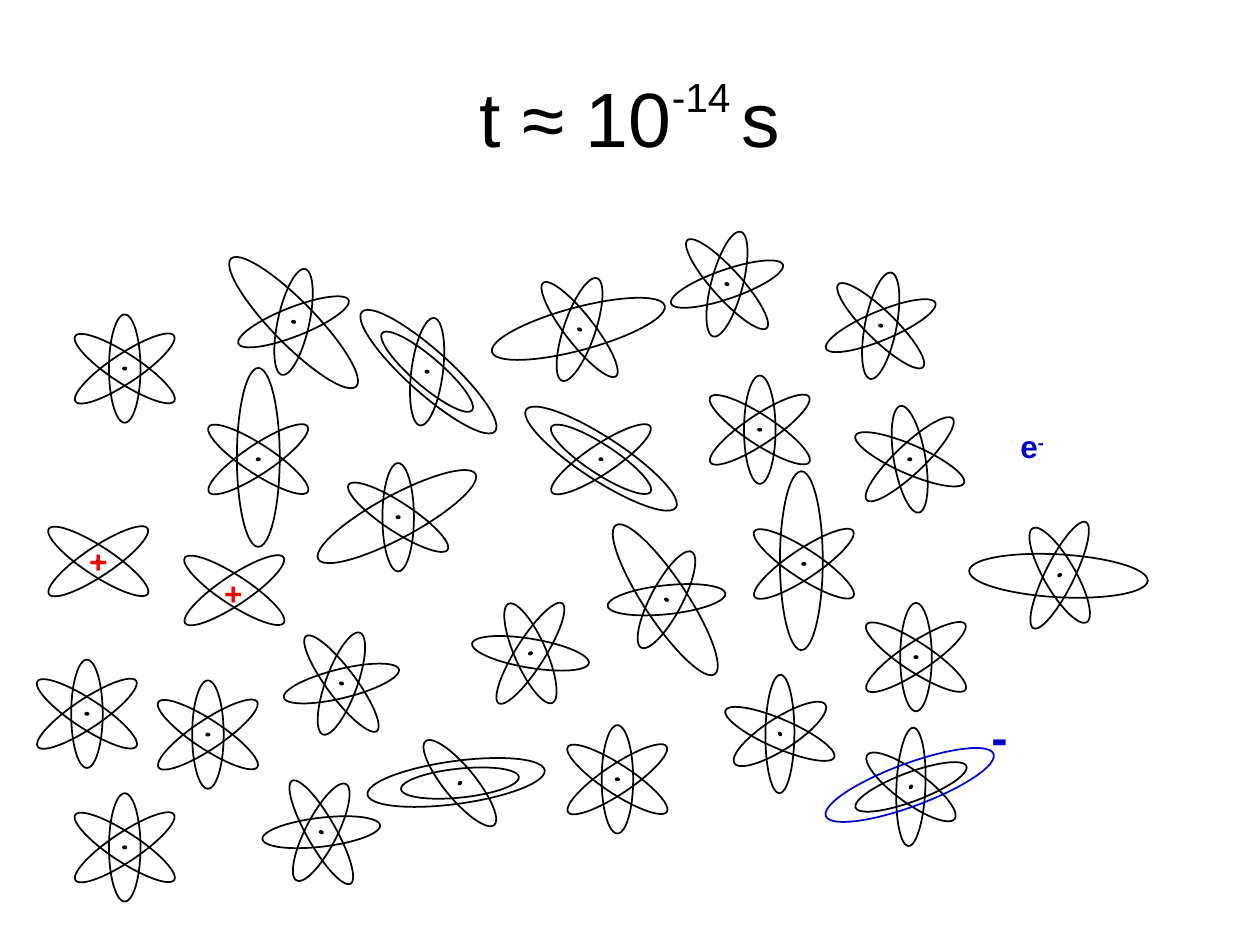
from pptx import Presentation
from pptx.dml.color import RGBColor
from pptx.enum.shapes import MSO_SHAPE
from pptx.enum.text import MSO_ANCHOR, MSO_AUTO_SIZE, PP_ALIGN
from pptx.util import Inches, Pt

COLORS = {"ink": "000000", "electron": "0000CC", "ion": "FF0000"}
COLUMNS, ROWS = 1000, 750
ORBITS = {"upright": (86, 25, 0), "falling": (94, 23, -56.7), "rising": (94, 23, 56.2)}
ALL = ("upright", "falling", "rising")
CROSSED = ("falling", "rising")

ATOMS = [
    (271, 542.5, 290, ALL), (421, 518.5, 246.2, ALL), (722, 364.5, 260.3, ALL),
    (727, 521.5, 270, ALL), (603, 341, 270, ALL), (619, 582.5, 327.2, ALL),
    (490, 618.5, 270, ALL), (255, 660.5, 297.1, ALL), (165, 583, 270, ALL),
    (699, 258.5, 281.1, ALL), (577, 225.5, 284.7, ALL), (69, 566.5, 270, ALL),
    (99, 672.5, 270, ALL), (99, 292.5, 270, ALL), (723, 624.5, 216.2, ALL),
    (460, 261.5, 288.8, ("upright", "falling")),
    (233, 255.5, 282.3, ("upright", "rising")),
    (316, 410.5, 270, ("upright", "falling")),
    (365, 621.5, 230.8, ("upright", "falling")),
    (339, 295, 277.4, ("upright", "falling")),
    (841, 456.5, 240.1, ("upright", "rising")),
    (529, 476, 297.8, ("upright", "rising")),
    (477, 364.5, 270, CROSSED), (205, 364.5, 270, CROSSED),
    (638, 447.5, 270, CROSSED), (78, 445.5, 270, CROSSED),
]
EXCITED_ORBITS = [
    (459, 261, 345, "ink"), (233, 256, 225.6, "ink"), (477, 364, 33.1, "ink"),
    (362, 621, 352.2, "ink"), (722, 623, 339.7, "electron"), (340, 295, 41.9, "ink"),
    (840, 457, 3.2, "ink"), (636, 445, 90, "ink"), (205, 363, 90, "ink"),
    (315, 410, 331.6, "ink"), (528, 476, 56.5, "ink"),
]
CHARGES = [
    (777, 556, 57, 28, "electron", [("-", 0)]),
    (800, 334, 40, 18, "electron", [("e", 0), ("-", 30)]),
    (168, 451, 40, 18, "ion", [("+", 0)]),
    (61, 425, 40, 18, "ion", [("+", 0)]),
]


class Sketch:
    """Draws atoms and labels on one page, measured in grid columns and rows."""

    font = "Arial"

    def __init__(self, deck):
        self.page = deck.slides.add_slide(deck.slide_layouts[5])
        self.column = deck.slide_width / COLUMNS
        self.row = deck.slide_height / ROWS

    def frame(self, left, top, width, height):
        return (round(left * self.column), round(top * self.row),
                round(width * self.column), round(height * self.row))

    def style(self, font, size, color, bold=False):
        font.name, font.size, font.bold = self.font, Pt(size), bold
        font.color.rgb = RGBColor.from_string(COLORS[color])

    def spans(self, para, pieces):
        for text, raised in pieces:
            span = para.add_run()
            span.text = text
            if raised:
                span.font._element.set("baseline", str(raised * 1000))
        return para.runs

    def title(self, pieces):
        box = self.page.shapes.title
        box.left, box.top, box.width, box.height = self.frame(50, 30, 900, 125)
        box.text_frame.auto_size = MSO_AUTO_SIZE.NONE
        box.text_frame.vertical_anchor = MSO_ANCHOR.MIDDLE
        para = box.text_frame.paragraphs[0]
        para.alignment = PP_ALIGN.CENTER
        self.style(para.font, 44, "ink")
        self.spans(para, pieces)[1].font.size = Pt(40)

    def ellipse(self, shapes, column, row, width, height, turn, color="ink"):
        shape = shapes.add_shape(
            MSO_SHAPE.OVAL,
            *self.frame(column - width / 2, row - height / 2, width, height))
        shape.rotation = turn % 360
        shape.shadow.inherit = False
        shape.fill.background()
        shape.line.color.rgb = RGBColor.from_string(COLORS[color])
        shape.line.width = Pt(1)
        return shape

    def atom(self, column, row, turn, orbits, nucleus=True):
        shapes = self.page.shapes.add_group_shape().shapes
        for orbit in orbits:
            width, height, tilt = ORBITS[orbit]
            self.ellipse(shapes, column, row, width, height, turn + tilt)
        if nucleus:
            dot = self.ellipse(shapes, column, row, 2, 3, turn)
            dot.fill.solid()
            dot.fill.fore_color.rgb = RGBColor.from_string(COLORS["ink"])
            dot.line.width = Pt(0.75)

    def excited_orbit(self, column, row, turn, color):
        self.ellipse(self.page.shapes, column, row, 142, 34, turn, color)

    def charge(self, left, top, height, size, color, pieces):
        box = self.page.shapes.add_textbox(*self.frame(left, top, 40, height))
        box.text_frame.word_wrap = True
        box.text_frame.auto_size = MSO_AUTO_SIZE.SHAPE_TO_FIT_TEXT
        para = box.text_frame.paragraphs[0]
        self.style(para.font, size, color, bold=True)
        self.spans(para, pieces)


def main():
    deck = Presentation()
    deck.slide_width, deck.slide_height = Inches(10), Inches(7.5)
    sketch = Sketch(deck)
    sketch.title([("t ≈ 10", 0), ("-14 ", 50), ("s", 0)])
    for atom in ATOMS:
        sketch.atom(*atom)
    sketch.atom(186, 468.5, 270, CROSSED, nucleus=False)
    for orbit in EXCITED_ORBITS:
        sketch.excited_orbit(*orbit)
    for charge in CHARGES:
        sketch.charge(*charge)
    deck.save("out.pptx")


if __name__ == "__main__":
    main()
